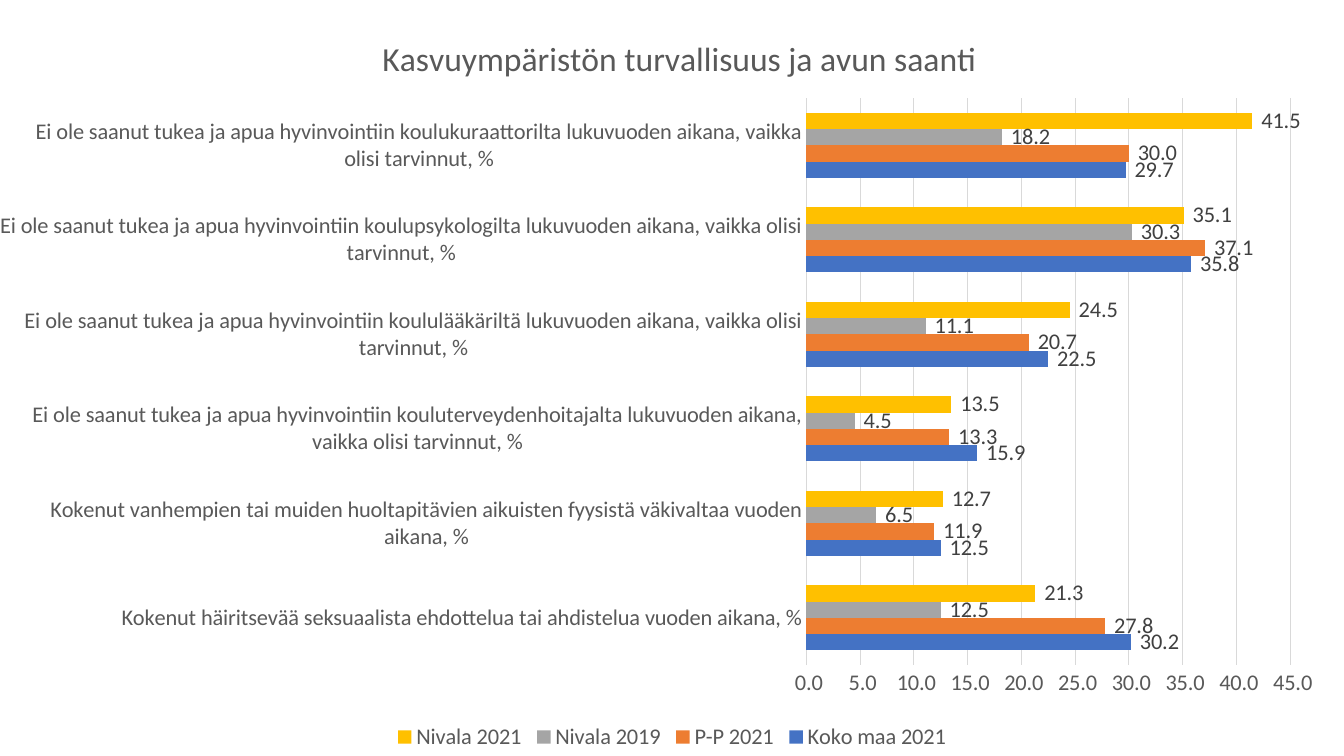
"""Build a slide with a clustered bar chart on school-age safety and support."""
from lxml import etree
from pptx import Presentation
from pptx import util as u
from pptx.chart.data import CategoryChartData
from pptx.dml.color import RGBColor
from pptx.enum import chart as ch
from pptx.oxml.ns import qn

TITLE = "Kasvuympäristön turvallisuus ja avun saanti"
CATEGORIES = [
    "Kokenut häiritsevää seksuaalista ehdottelua tai ahdistelua vuoden aikana, %",
    "Kokenut vanhempien tai muiden huoltapitävien aikuisten fyysistä väkivaltaa vuoden aikana, %",
    "Ei ole saanut tukea ja apua hyvinvointiin kouluterveydenhoitajalta lukuvuoden aikana, vaikka olisi tarvinnut, %",
    "Ei ole saanut tukea ja apua hyvinvointiin koululääkäriltä lukuvuoden aikana, vaikka olisi tarvinnut, %",
    "Ei ole saanut tukea ja apua hyvinvointiin koulupsykologilta lukuvuoden aikana, vaikka olisi tarvinnut, %",
    "Ei ole saanut tukea ja apua hyvinvointiin koulukuraattorilta lukuvuoden aikana, vaikka olisi tarvinnut, %",
]
SERIES = [
    ("Koko maa 2021", "4472C4", (30.2, 12.5, 15.9, 22.5, 35.8, 29.7)),
    ("P-P 2021", "ED7D31", (27.8, 11.9, 13.3, 20.7, 37.1, 30.0)),
    ("Nivala 2019", "A5A5A5", (12.5, 6.5, 4.5, 11.1, 30.3, 18.2)),
    ("Nivala 2021", "FFC000", (21.3, 12.7, 13.5, 24.5, 35.1, 41.5)),
]
NUMBER_FORMAT = "#\\ ##0.0"
TEXT, LABEL, GRID = "595959", "404040", "D9D9D9"
WIDTH, HEIGHT = u.Cm(33.87), u.Cm(19.05)


def color(value):
    return RGBColor.from_string(value)


def set_font(font, size, value):
    font.name = "Calibri"
    font.size = u.Pt(size)
    font.bold = False
    font.color.rgb = color(value)


def set_line(line, value):
    line.color.rgb = color(value)
    line.width = u.Pt(0.75)


def place(element, index, **settings):
    for old in element.findall(qn("c:layout")):
        element.remove(old)
    layout = etree.Element(qn("c:layout"))
    manual = etree.SubElement(layout, qn("c:manualLayout"))
    for name, value in settings.items():
        etree.SubElement(manual, qn(f"c:{name}")).set("val", str(value))
    element.insert(index, layout)


def format_axes(chart):
    for axis in (chart.category_axis, chart.value_axis):
        axis.major_tick_mark = axis.minor_tick_mark = ch.XL_TICK_MARK.NONE
        set_font(axis.tick_labels.font, 16, TEXT)
    set_line(chart.category_axis.format.line, GRID)
    values = chart.value_axis
    values.minimum_scale, values.maximum_scale, values.major_unit = 0, 45, 5
    values.format.line.fill.background()
    set_line(values.major_gridlines.format.line, GRID)
    values.tick_labels.number_format = NUMBER_FORMAT
    values.tick_labels.number_format_is_linked = False


def format_series(plot):
    plot.gap_width, plot.overlap = 182, 0
    plot.vary_by_categories = False
    for series, (_, fill, _) in zip(plot.series, SERIES):
        series.format.fill.solid()
        series.format.fill.fore_color.rgb = color(fill)
        series.invert_if_negative = False
        labels = series.data_labels
        labels.show_value = True
        labels.position = ch.XL_LABEL_POSITION.OUTSIDE_END
        labels.number_format = NUMBER_FORMAT
        labels.number_format_is_linked = False
        set_font(labels.font, 16, LABEL)


def main():
    presentation = Presentation()
    presentation.slide_width, presentation.slide_height = WIDTH, HEIGHT
    slide = presentation.slides.add_slide(presentation.slide_layouts[6])
    data = CategoryChartData(number_format=NUMBER_FORMAT)
    data.categories = CATEGORIES
    for name, _, values in SERIES:
        data.add_series(name, values)
    chart = slide.shapes.add_chart(
        ch.XL_CHART_TYPE.BAR_CLUSTERED, 0, 0, WIDTH, HEIGHT, data).chart
    set_font(chart.font, 16, "000000")

    title = chart.chart_title
    title.text_frame.text = TITLE
    set_font(title.text_frame.paragraphs[0].runs[0].font, 24, TEXT)
    title.include_in_layout = False

    chart.has_legend = True
    legend = chart.legend
    legend.position = ch.XL_LEGEND_POSITION.BOTTOM
    legend.include_in_layout = False
    set_font(legend.font, 16, TEXT)

    format_axes(chart)
    format_series(chart.plots[0])

    plot_area = chart.plots[0]._element.getparent()
    place(title._element, 1, xMode="edge", yMode="edge", x=0.28, y=0.04)
    place(legend._element, 1, xMode="edge", yMode="edge", x=0.29, y=0.95, w=0.42, h=0.05)
    place(plot_area, 0, layoutTarget="inner", xMode="edge", yMode="edge",
          x=0.6, y=0.13, w=0.36, h=0.75)
    presentation.save("out.pptx")


if __name__ == "__main__":
    main()
